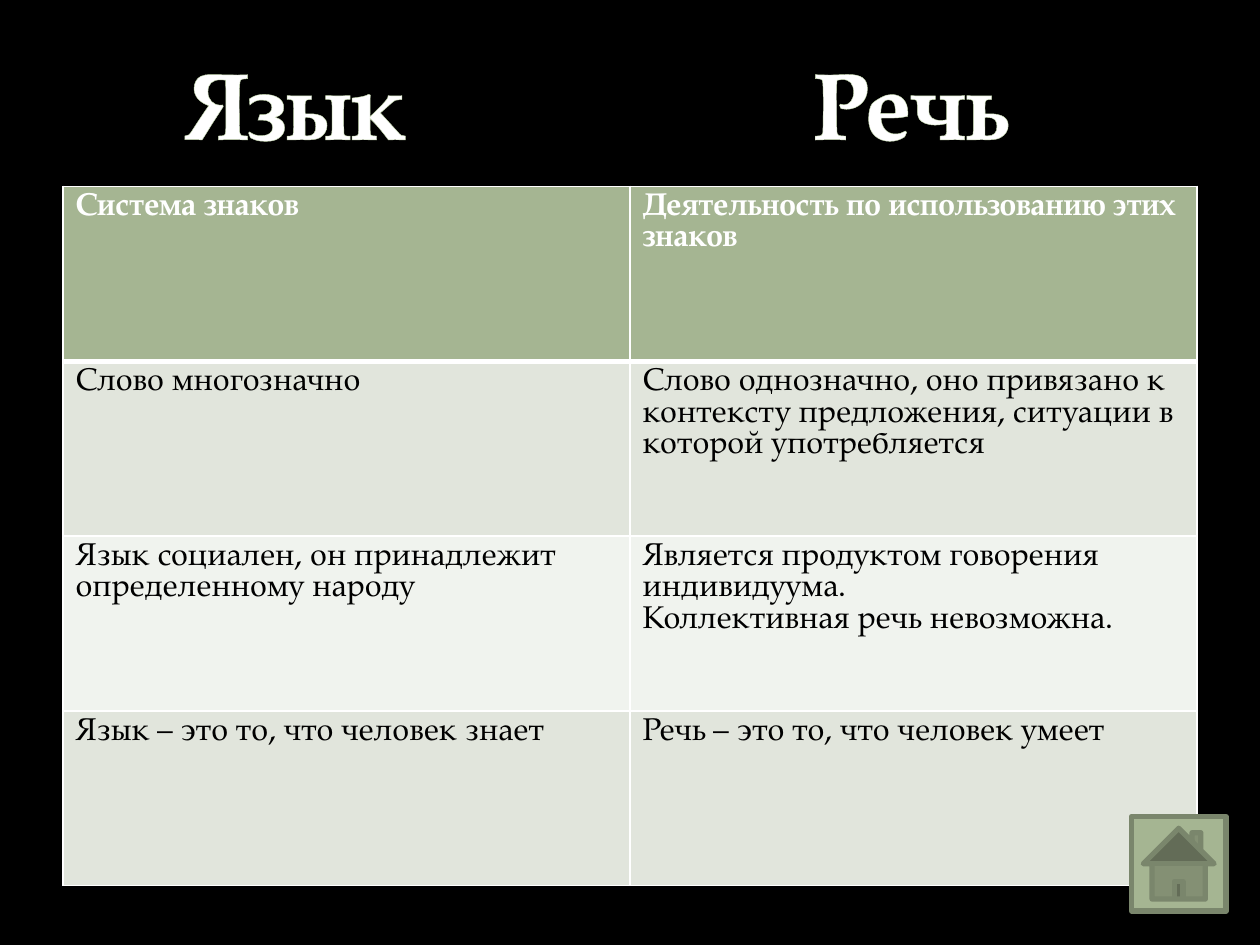
from dataclasses import dataclass
from lxml import etree
from pptx import Presentation
from pptx.dml.color import RGBColor
from pptx.enum.shapes import MSO_SHAPE
from pptx.enum.text import MSO_AUTO_SIZE, PP_ALIGN
from pptx.oxml.ns import qn
from pptx.slide import Slide
from pptx.util import Inches, Pt

HOME = MSO_SHAPE.ACTION_BUTTON_HOME
GROW = MSO_AUTO_SIZE.SHAPE_TO_FIT_TEXT
CENTER = PP_ALIGN.CENTER

ROWS = [
    ("Система знаков", "Деятельность по использованию этих знаков"),
    ("Слово многозначно",
     "Слово однозначно, оно привязано к контексту предложения, "
     "ситуации в которой употребляется"),
    ("Язык социален, он принадлежит определенному народу",
     "Является продуктом говорения индивидуума.\nКоллективная речь невозможна."),
    ("Язык – это то, что человек знает", "Речь – это то, что человек умеет"),
]
TITLES = [("Язык", 1.25, 2.17), ("Речь", 6.25, 1.95)]


def color(code):
    return RGBColor.from_string(code)


def stroke(tag, code, width):
    line = etree.Element(qn(tag), w=str(Pt(width)))
    fill = etree.SubElement(line, qn("a:solidFill"))
    etree.SubElement(fill, qn("a:srgbClr"), val=code)
    return line


@dataclass
class Board:
    """Style and current slide, with a method for each kind of element."""
    slide: Slide
    face: str = "TeX Gyre Pagella"
    white: str = "FFFFFF"
    black: str = "000000"
    green: str = "A5B592"
    edge: str = "7A866C"
    glow: str = "C1D4AC"
    bands: tuple = ("F0F3EE", "E1E5DC")

    def back(self):
        fill = self.slide.background.fill
        fill.solid()
        fill.fore_color.rgb = color(self.black)

    def style(self, para, size, code, bold):
        font = para.font
        font.name, font.size, font.bold = self.face, Pt(size), bold
        font.color.rgb = color(code)

    def title(self, text, left, width):
        box = self.slide.shapes.add_textbox(
            Inches(left), Inches(0.31), Inches(width), Inches(1.01))
        frame = box.text_frame
        frame.word_wrap = False
        frame.auto_size = GROW
        para = frame.paragraphs[0]
        para.alignment = CENTER
        run = para.add_run()
        run.text = text
        self.style(para, 54, self.white, True)
        run._r.get_or_add_rPr().insert(0, stroke("a:ln", self.glow, 2.48))

    def cell(self, cell, text, row):
        head = row == 0
        cell.text = text
        for para in cell.text_frame.paragraphs:
            self.style(para, 18, self.white if head else self.black, head)
        props = cell._tc.get_or_add_tcPr()
        widths = {"L": 1, "R": 1, "T": 3 if row == 1 else 1, "B": 3 if head else 1}
        for side, width in widths.items():
            props.append(stroke(f"a:ln{side}", self.white, width))
        cell.fill.solid()
        cell.fill.fore_color.rgb = color(self.green if head else self.bands[row % 2])

    def table(self, rows):
        grid = self.slide.shapes.add_table(
            len(rows), len(rows[0]),
            Inches(0.5), Inches(1.48), Inches(9), Inches(5.55)).table
        for i, row in enumerate(rows):
            for j, text in enumerate(row):
                self.cell(grid.cell(i, j), text, i)

    def home(self, left, top, size):
        icon = self.slide.shapes.add_shape(
            HOME, Inches(left), Inches(top), Inches(size), Inches(size))
        icon.shadow.inherit = False
        icon.fill.solid()
        icon.fill.fore_color.rgb = color(self.green)
        icon.line.color.rgb = color(self.edge)
        icon.line.width = Pt(3)


def main():
    deck = Presentation()
    deck.slide_width, deck.slide_height = Inches(10), Inches(7.5)
    board = Board(deck.slides.add_slide(deck.slide_layouts[6]))
    board.back()
    board.table(ROWS)
    for title in TITLES:
        board.title(*title)
    board.home(8.98, 6.48, 0.75)
    deck.save("out.pptx")


if __name__ == "__main__":
    main()
